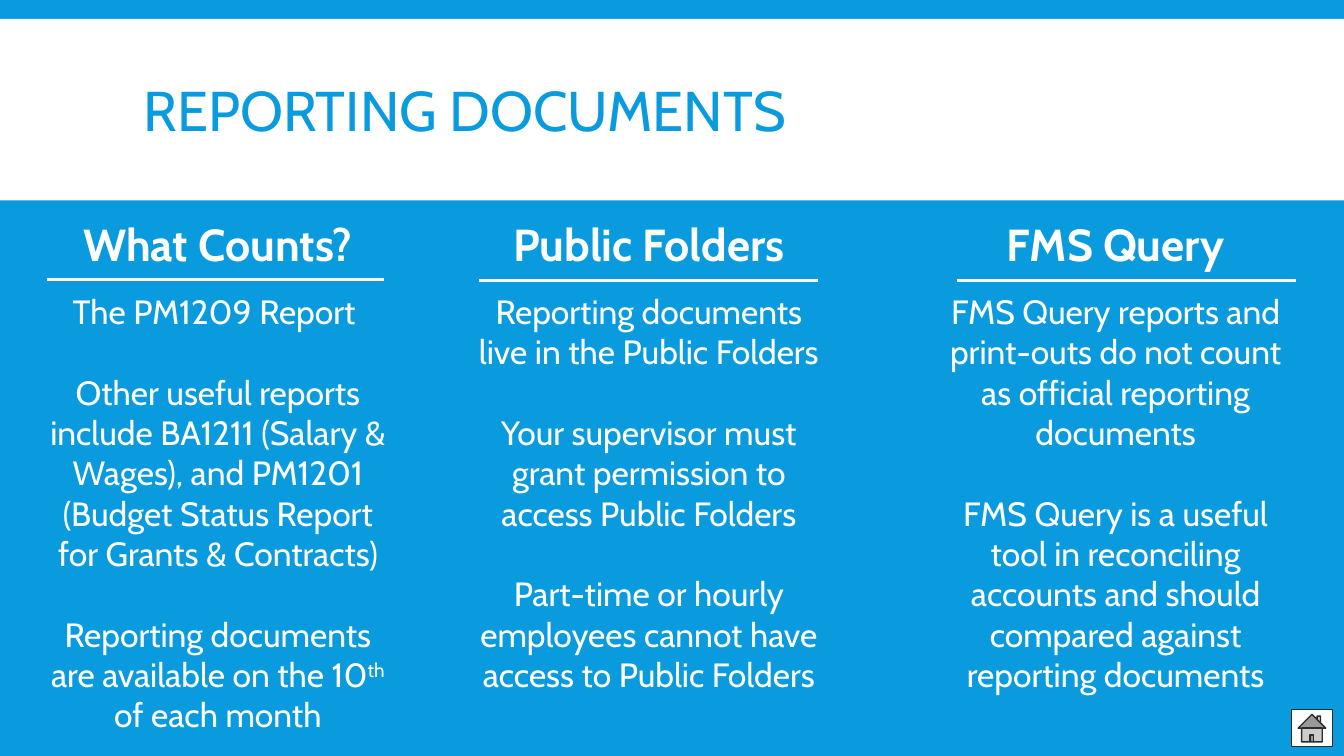
from dataclasses import dataclass

from lxml.etree import SubElement
from pptx import Presentation
from pptx.dml.color import RGBColor
from pptx.enum.shapes import MSO_CONNECTOR, MSO_SHAPE
from pptx.enum.text import MSO_ANCHOR, MSO_AUTO_SIZE, PP_ALIGN
from pptx.oxml.ns import qn
from pptx.util import Emu, Pt


@dataclass(frozen=True)
class Theme:
    """Colours, font and type sizes in points."""
    blue: str = "099BDD"
    white: str = "FFFFFF"
    outline: str = "2C2C2C"
    font: str = "Cabin"
    title: int = 40
    heading: int = 32
    body: int = 24
    heading_gap: float = 14.4
    body_gap: float = 28.8


THEME = Theme()
EMU_PER_PX = 9525
COLUMN_TOP = 202

COLUMNS = [
    {
        "box": (437, 362, 468), "rule": (456, 779, 267),
        "heading": "Public Folders",
        "paragraphs": [
            "Reporting documents live in the Public Folders",
            "Your supervisor must grant permission to access Public Folders",
            "Part-time or hourly employees cannot have access to Public Folders",
        ],
    },
    {
        "box": (891, 343, 468), "rule": (911, 1234, 267),
        "heading": "FMS Query",
        "paragraphs": [
            "FMS Query reports and print-outs do not count as official reporting documents",
            "FMS Query is a useful tool in reconciling accounts and should compared "
            "against reporting documents",
        ],
    },
    {
        "box": (36, 343, 507), "rule": (45, 366, 266),
        "heading": "What Counts?",
        "paragraphs": [
            "The PM1209 Report ",
            "Other useful reports include BA1211 (Salary & Wages), and PM1201 "
            "(Budget Status Report for Grants & Contracts)",
            "Reporting documents are available on the 10^th^ of each month",
        ],
    },
]


def px(n):
    """Turn pixels into EMU."""
    return Emu(n * EMU_PER_PX)


def rgb(code):
    """Turn a hex code into a colour."""
    return RGBColor.from_string(code)


def write(p, text, size, color=THEME.white, bold=False, align=PP_ALIGN.CENTER,
          before=0, spacing=None):
    """Fill a paragraph, raising the parts between carets."""
    p.alignment = align
    p.space_before = Pt(before)
    p.line_spacing = spacing
    for i, part in enumerate(text.split("^")):
        r = p.add_run()
        r.text = part
        r.font.name = THEME.font
        r.font.size = Pt(size)
        r.font.bold = bold
        r.font.color.rgb = rgb(color)
        if i % 2:
            r.font._element.set("baseline", "30000")


def add_block(s, kind, left, top, width, height, line=None):
    """Add a white preset shape with an optional outline."""
    sp = s.shapes.add_shape(kind, px(left), px(top), px(width), px(height))
    sp.shadow.inherit = False
    sp.fill.solid()
    sp.fill.fore_color.rgb = rgb(THEME.white)
    if line:
        sp.line.color.rgb = rgb(line)
        sp.line.width = Pt(1)
    else:
        sp.line.fill.background()


def add_title(s, text):
    """Place and format the title placeholder."""
    sp = s.shapes.title
    sp.left, sp.top, sp.width, sp.height = (px(n) for n in (127, 30, 1027, 158))
    tf = sp.text_frame
    tf.auto_size = MSO_AUTO_SIZE.NONE
    tf.vertical_anchor = MSO_ANCHOR.MIDDLE
    write(tf.paragraphs[0], text, THEME.title, color=THEME.blue,
          align=PP_ALIGN.LEFT, spacing=0.85)


def add_rule(s, left, right, y):
    """Draw the line under a column heading."""
    cn = s.shapes.add_connector(MSO_CONNECTOR.STRAIGHT, px(left), px(y), px(right), px(y))
    cn.line.color.rgb = rgb(THEME.white)
    cn.line.width = Pt(2.25)
    SubElement(cn._element.spPr, qn("a:effectLst"))


def add_column(s, box, rule, heading, paragraphs):
    """Add a heading, its line and the paragraphs below."""
    left, width, height = box
    sp = s.shapes.add_textbox(px(left), px(COLUMN_TOP), px(width), px(height))
    tf = sp.text_frame
    tf.word_wrap = True
    tf.auto_size = MSO_AUTO_SIZE.SHAPE_TO_FIT_TEXT
    write(tf.paragraphs[0], heading, THEME.heading, bold=True)
    for i, text in enumerate(paragraphs):
        gap = THEME.body_gap if i else THEME.heading_gap
        write(tf.add_paragraph(), text, THEME.body, before=gap)
    add_rule(s, *rule)


def main():
    """Build and save the slide."""
    prs = Presentation()
    prs.slide_width, prs.slide_height = px(1280), px(720)
    s = prs.slides.add_slide(prs.slide_layouts[5])
    s.background.fill.solid()
    s.background.fill.fore_color.rgb = rgb(THEME.blue)
    add_block(s, MSO_SHAPE.RECTANGLE, 0, 18, 1280, 173)
    title = s.shapes.title._element
    title.getparent().append(title)
    add_title(s, "REPORTING DOCUMENTS")
    for column in COLUMNS:
        add_column(s, **column)
    add_block(s, MSO_SHAPE.ACTION_BUTTON_HOME, 1230, 676, 39, 35, line=THEME.outline)
    prs.save("out.pptx")


if __name__ == "__main__":
    main()
